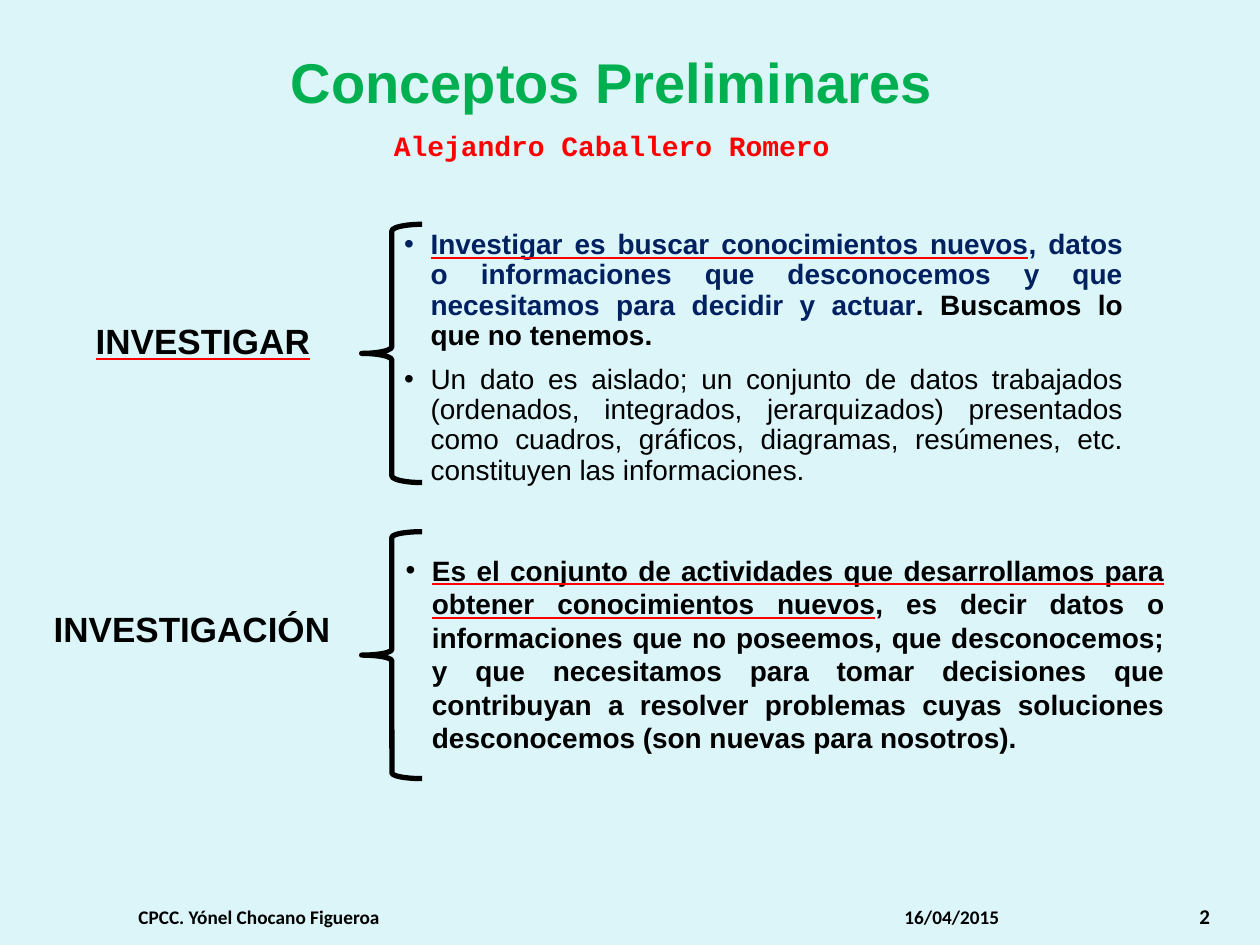
from dataclasses import dataclass

from lxml import etree
from pptx import Presentation, util as u
from pptx.dml.color import RGBColor
from pptx.enum import shapes, text
from pptx.oxml import ns


@dataclass(frozen=True)
class Theme:
    background: str = "DBF5F9"
    ink: str = "000000"
    title: str = "00B050"
    accent: str = "FF0000"
    navy: str = "002060"
    sans: str = "Arial"
    mono: str = "Courier New"
    small: str = "Calibri"
    title_size: int = 32
    label_size: int = 20
    body_size: int = 16
    number_size: int = 12
    footer_size: int = 11
    brace_width: int = 3


T = Theme()
A = text.PP_ALIGN
WIDTH, HEIGHT = 10, 7.5
INDENT = 0.21
BRACE_LEFT, BRACE_WIDTH = 2.87, 0.48
FOOTER_TOP, FOOTER_HEIGHT = 7.02, 0.4


def run(words, size=T.body_size, color=T.ink, font=T.sans, bold=True, underline=False):
    return dict(words=words, size=size, color=color, font=font, bold=bold, underline=underline)


HEADING = [
    [run("Conceptos Preliminares", T.title_size, T.title)],
    [run("Alejandro Caballero Romero", color=T.accent, font=T.mono)],
]

CONCEPTS = [
    dict(
        label=run("INVESTIGAR", T.label_size, underline=True),
        label_box=(0.35, 2.49, 2.52, 0.44), label_align=A.CENTER,
        brace=(1.78, 2.05, 0.11), body_box=(3.11, 1.78, 5.9, 2.18), spacing=0.9,
        body=[
            [run("Investigar es buscar conocimientos nuevos", color=T.navy, underline=True),
             run(", datos o informaciones que desconocemos y que necesitamos para decidir y actuar",
                 color=T.navy),
             run(". Buscamos lo que no tenemos.")],
            [run("Un dato es aislado; un conjunto de datos trabajados (ordenados, integrados, "
                 "jerarquizados) presentados como cuadros, gráficos, diagramas, resúmenes, etc. "
                 "constituyen las informaciones.", bold=False)],
        ],
    ),
    dict(
        label=run("INVESTIGACIÓN", T.label_size),
        label_box=(0.12, 4.77, 2.6, 0.44), label_align=A.RIGHT,
        brace=(4.22, 1.96, 0.095), body_box=(3.12, 4.34, 6.22, 1.72), spacing=None,
        body=[
            [run("Es el conjunto de actividades que desarrollamos para obtener conocimientos nuevos",
                 underline=True),
             run(", es decir datos o informaciones que no poseemos, que desconocemos; y que "
                 "necesitamos para tomar decisiones que contribuyan a resolver problemas cuyas "
                 "soluciones desconocemos (son nuevas para nosotros).")],
        ],
    ),
]

FOOTER = [  # left, width, text, size
    (7.08, 2.33, "16/04/2015", T.footer_size),
    (1, 6.08, "CPCC. Yónel Chocano Figueroa", T.footer_size),
    (9.42, 0.5, "2", T.number_size),
]


def inches(box):
    return [u.Inches(v) for v in box]


def underline_in_accent(r):
    r.font.underline = True
    fill = etree.Element(ns.qn("a:uFill"))
    solid = etree.SubElement(fill, ns.qn("a:solidFill"))
    etree.SubElement(solid, ns.qn("a:srgbClr"), val=T.accent)
    r.font._element.find(ns.qn("a:latin")).addprevious(fill)


def add_bullet(p):
    pPr = p._p.get_or_add_pPr()
    pPr.set("marL", str(u.Inches(INDENT)))
    pPr.set("indent", str(-u.Inches(INDENT)))
    etree.SubElement(pPr, ns.qn("a:buFont"), typeface=T.sans)
    etree.SubElement(pPr, ns.qn("a:buChar"), char="•")


def add_text(parent, box, paragraphs, align=A.LEFT, spacing=None, bullets=False, footer=False):
    tf = parent.add_textbox(*inches(box)).text_frame
    tf.word_wrap = True
    if footer:
        tf.vertical_anchor = text.MSO_ANCHOR.BOTTOM
    else:
        tf.auto_size = text.MSO_AUTO_SIZE.SHAPE_TO_FIT_TEXT
    for i, runs in enumerate(paragraphs):
        p = tf.add_paragraph() if i else tf.paragraphs[0]
        p.alignment = align
        if spacing:
            p.line_spacing = spacing
        if i:
            p.space_before = u.Pt(runs[0]["size"] / 2)
        if bullets:
            add_bullet(p)
        for item in runs:
            r = p.add_run()
            r.text = item["words"]
            r.font.size = u.Pt(item["size"])
            r.font.bold = item["bold"]
            r.font.color.rgb = RGBColor.from_string(item["color"])
            r.font.name = item["font"]
            if item["underline"]:
                underline_in_accent(r)


def add_brace(parent, top, height, curve):
    sp = parent.add_shape(shapes.MSO_SHAPE.LEFT_BRACE,
                          *inches((BRACE_LEFT, top, BRACE_WIDTH, height)))
    sp.adjustments[0] = curve
    sp.shadow.inherit = False
    sp.fill.background()
    sp.line.color.rgb = RGBColor.from_string(T.ink)
    sp.line.width = u.Pt(T.brace_width)


def main():
    prs = Presentation()
    prs.slide_width, prs.slide_height = inches((WIDTH, HEIGHT))
    s = prs.slides.add_slide(prs.slide_layouts[6])
    s.background.fill.solid()
    s.background.fill.fore_color.rgb = RGBColor.from_string(T.background)

    for c in CONCEPTS:
        add_text(s.shapes, c["label_box"], [[c["label"]]], c["label_align"])
    add_text(s.shapes, (1.77, 0.33, 6.17, 1.04), HEADING, A.CENTER)
    for c in CONCEPTS:
        group = s.shapes.add_group_shape().shapes
        add_text(group, c["body_box"], c["body"], A.JUSTIFY, c["spacing"], bullets=True)
        add_brace(group, *c["brace"])
    for left, width, words, size in FOOTER:
        add_text(s.shapes, (left, FOOTER_TOP, width, FOOTER_HEIGHT),
                 [[run(words, size, font=T.small)]], footer=True)
    prs.save("out.pptx")


if __name__ == "__main__":
    main()
